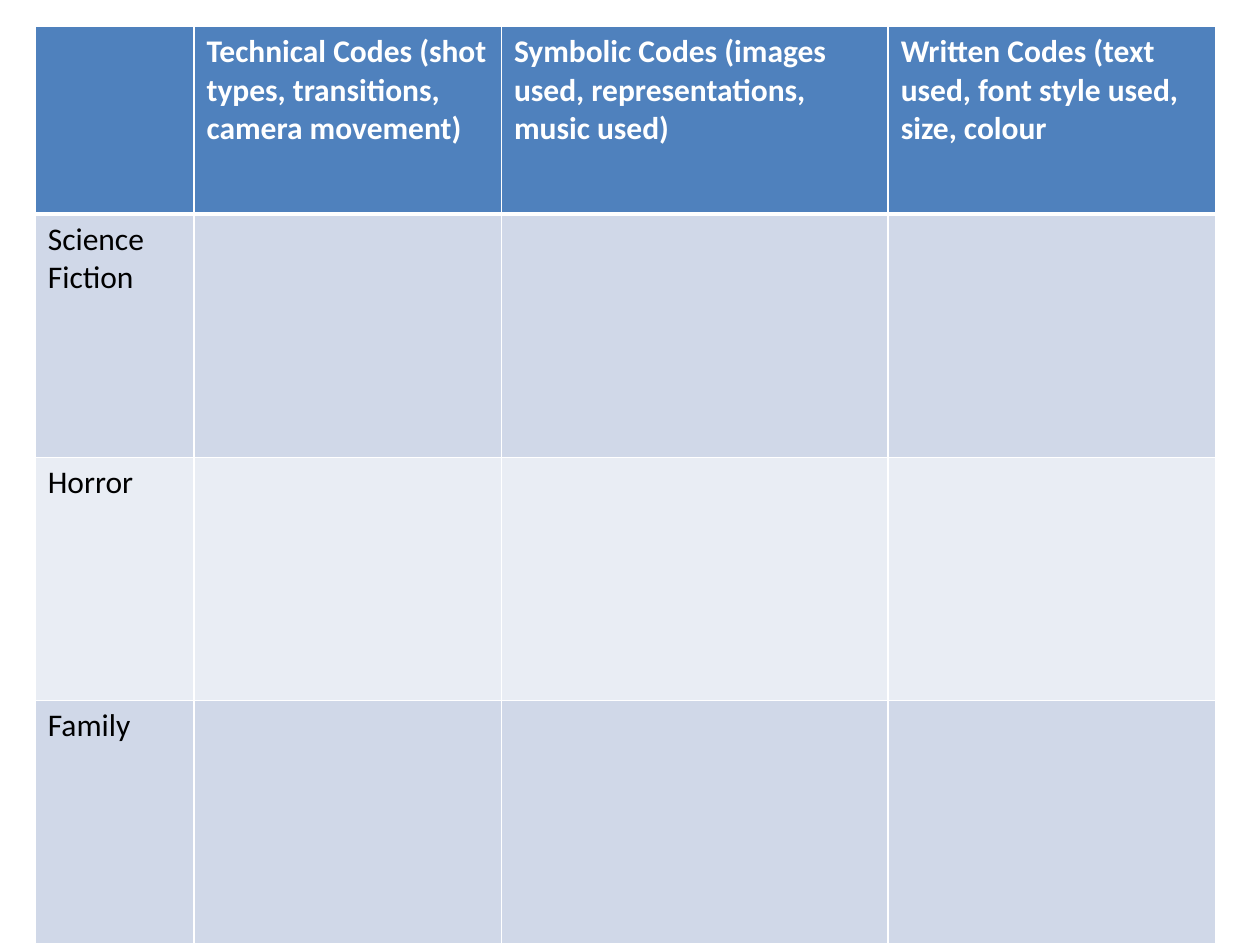
import pptx
import pptx.dml.color
import pptx.util
from lxml import etree
from pptx.oxml.ns import qn
from pptx.util import Inches

COLOURS = {
    "header": "4F81BD",
    "odd": "D0D8E8",
    "even": "E9EDF4",
    "rule": "FFFFFF",
    "header_text": "FFFFFF",
    "text": "000000",
}
ROWS = [
    [
        "",
        "Technical Codes (shot types, transitions, camera movement)",
        "Symbolic Codes (images used, representations, music used)",
        "Written Codes (text used, font style used, size, colour",
    ],
    ["Science Fiction", "", "", ""],
    ["Horror", "", "", ""],
    ["Family", "", "", ""],
]
COLUMN_WIDTHS = [1.26, 2.44, 3.07, 2.6]
ROW_HEIGHTS = [1.49] + [1.93] * 3


def colour(name):
    return pptx.dml.color.RGBColor.from_string(COLOURS[name])


def set_borders(cell, top, bottom):
    """Draw the four rules of a cell; top and bottom are widths in points."""
    properties = cell._tc.get_or_add_tcPr()
    sides = [("a:lnL", 1), ("a:lnR", 1), ("a:lnT", top), ("a:lnB", bottom)]
    for position, (tag, width) in enumerate(sides):
        line = etree.Element(qn(tag), w=str(pptx.util.Pt(width)))
        fill = etree.SubElement(line, qn("a:solidFill"))
        etree.SubElement(fill, qn("a:srgbClr"), val=COLOURS["rule"])
        properties.insert(position, line)


deck = pptx.Presentation()
deck.slide_width = Inches(10)
deck.slide_height = Inches(7.5)
page = deck.slides.add_slide(deck.slide_layouts[6])

table = page.shapes.add_table(
    len(ROWS), len(COLUMN_WIDTHS), Inches(0.28), Inches(0.21),
    Inches(sum(COLUMN_WIDTHS)), Inches(sum(ROW_HEIGHTS)),
).table
for column, width in zip(table.columns, COLUMN_WIDTHS):
    column.width = Inches(width)
for row, height in zip(table.rows, ROW_HEIGHTS):
    row.height = Inches(height)

for row_number, texts in enumerate(ROWS):
    is_header = row_number == 0
    band = "header" if is_header else "odd" if row_number % 2 else "even"
    for column_number, text in enumerate(texts):
        cell = table.cell(row_number, column_number)
        cell.fill.solid()
        cell.fill.fore_color.rgb = colour(band)
        set_borders(cell, top=3 if row_number == 1 else 1, bottom=3 if is_header else 1)
        if text:
            span = cell.text_frame.paragraphs[0].add_run()
            span.text = text
            span.font.name = "Calibri"
            span.font.size = pptx.util.Pt(18)
            span.font.bold = is_header
            span.font.color.rgb = colour("header_text" if is_header else "text")

deck.save("out.pptx")
